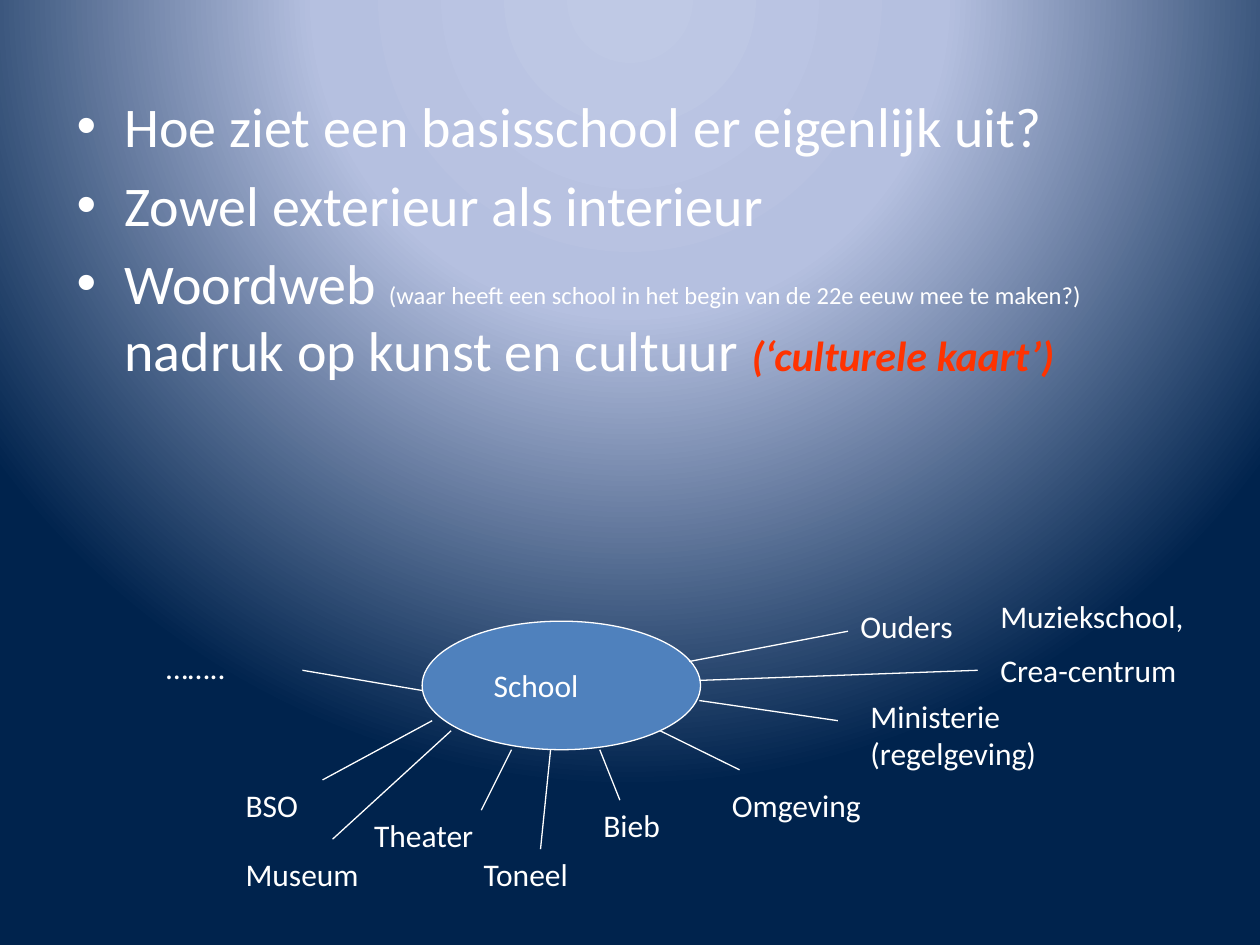
from pptx import Presentation
from pptx.dml.color import RGBColor
from pptx.enum.shapes import MSO_CONNECTOR as CONN, MSO_SHAPE as SHAPE
from pptx.enum.text import MSO_AUTO_SIZE as AUTO
from pptx.oxml import parse_xml
from pptx.oxml.ns import nsdecls, qn
from pptx.util import Inches, Pt
from lxml.etree import SubElement

COLS, ROWS = 100, 75
WIDTH, HEIGHT = Inches(10), Inches(7.5)
FONT = "Calibri"
COLORS = {"text": "FFFFFF", "accent": "FF3300", "school": "4F81BD"}
GRADIENT = [(0, "BFC9E5"), (40, "B5C0E0"), (100, "00234D")]

BODY_BOX = (5.1, 6.8, 90, 49.5)
BODY = [
    [("Hoe ziet een basisschool er eigenlijk uit?", 32, "text")],
    [("Zowel exterieur als interieur", 32, "text")],
    [
        ("Woordweb ", 32, "text"),
        ("(waar heeft een school in het begin van de 22e eeuw mee te maken?)", 14, "text"),
        (" nadruk op kunst en cultuur ", 32, "text"),
        ("(‘culturele kaart’)", 24, "accent"),
    ],
]

SCHOOL_BOX = (33.5, 49.3, 22.1, 10.2)
LABELS = [
    (["School"], (38.2, 52.4, 21.2, 4)),
    (["Ouders"], (67.3, 47.7, 16.5, 4)),
    (["Omgeving"], (57.1, 61.9, 19.7, 4)),
    (["Ministerie (regelgeving)"], (68.1, 54.8, 22.8, 7)),
    (["BSO"], (18.5, 61.9, 18.9, 4)),
    (["…….."], (12.2, 50.9, 11.8, 4)),
    (["Bieb"], (46.9, 63.5, 11, 4)),
    (["Theater"], (28.7, 64.3, 18.1, 4)),
    (["Toneel"], (37.4, 67.4, 11, 4)),
    (["Museum"], (18.5, 67.4, 11.8, 4)),
    (["Muziekschool,", "Crea-centrum"], (78.4, 46.9, 18.9, 8.5)),
]
SPOKES = [
    (54.7, 52.5, 67.3, 50.1),
    (52.4, 58, 58.7, 61.1),
    (34.3, 57.2, 25.6, 61.9),
    (33.5, 54.8, 24, 53.2),
    (55.5, 55.6, 66.5, 57.2),
    (47.6, 59.5, 49.2, 63.5),
    (40.6, 59.5, 38.2, 64.3),
    (43.7, 59.5, 42.9, 67.4),
    (35.8, 58, 26.4, 66.6),
    (55.5, 54, 77.6, 53.2),
]


def place(box):
    x1, y1, x2, y2 = box
    return [int(v) for v in (x1 * WIDTH / COLS, y1 * HEIGHT / ROWS,
                             x2 * WIDTH / COLS, y2 * HEIGHT / ROWS)]


def rgb(name):
    return RGBColor.from_string(COLORS[name])


def set_background(s):
    s.background.fill.solid()
    stops = "".join(f'<a:gs pos="{pos * 1000}"><a:srgbClr val="{color}"/></a:gs>'
                    for pos, color in GRADIENT)
    grad = parse_xml(
        f'<a:gradFill {nsdecls("a")} rotWithShape="1"><a:gsLst>{stops}</a:gsLst>'
        '<a:path path="circle"><a:fillToRect l="50000" t="-80000" r="50000" b="180000"/>'
        '</a:path></a:gradFill>')
    solid = s.background.fill._xPr.find(qn("a:solidFill"))
    solid.getparent().replace(solid, grad)


def add_text(s, box, paragraphs, before, bullet=False):
    tf = s.shapes.add_textbox(*place(box)).text_frame
    tf.word_wrap = True
    tf.auto_size = AUTO.NONE if bullet else AUTO.SHAPE_TO_FIT_TEXT
    for i, runs in enumerate(paragraphs):
        p = tf.add_paragraph() if i else tf.paragraphs[0]
        pPr = p._p.get_or_add_pPr()
        spacing = SubElement(pPr, qn("a:spcBef"))
        SubElement(spacing, qn("a:spcPct")).set("val", str(before * 1000))
        if bullet:
            pPr.set("marL", str(Inches(0.38)))
            pPr.set("indent", str(-Inches(0.38)))
            SubElement(pPr, qn("a:buFont")).set("typeface", "Arial")
            SubElement(pPr, qn("a:buChar")).set("char", "•")
        for text, size, color in runs:
            r = p.add_run()
            r.text = text
            r.font.name, r.font.size = FONT, Pt(size)
            r.font.color.rgb = rgb(color)
            if color == "accent":
                r.font.bold = r.font.italic = True


def style_line(sp):
    sp.line.color.rgb = rgb("text")
    sp.line.width = Pt(0.75)


def main():
    prs = Presentation()
    prs.slide_width, prs.slide_height = WIDTH, HEIGHT
    s = prs.slides.add_slide(prs.slide_layouts[6])
    set_background(s)
    add_text(s, BODY_BOX, BODY, 20, bullet=True)

    school = s.shapes.add_shape(SHAPE.OVAL, *place(SCHOOL_BOX))
    school.shadow.inherit = False
    school.fill.solid()
    school.fill.fore_color.rgb = rgb("school")
    style_line(school)

    for spoke in SPOKES:
        line = s.shapes.add_connector(CONN.STRAIGHT, *place(spoke))
        style_line(line)
        SubElement(line._element.spPr, qn("a:effectLst"))

    for lines, box in LABELS:
        add_text(s, box, [[(text, 18, "text")] for text in lines], 50)

    prs.save("out.pptx")


if __name__ == "__main__":
    main()
